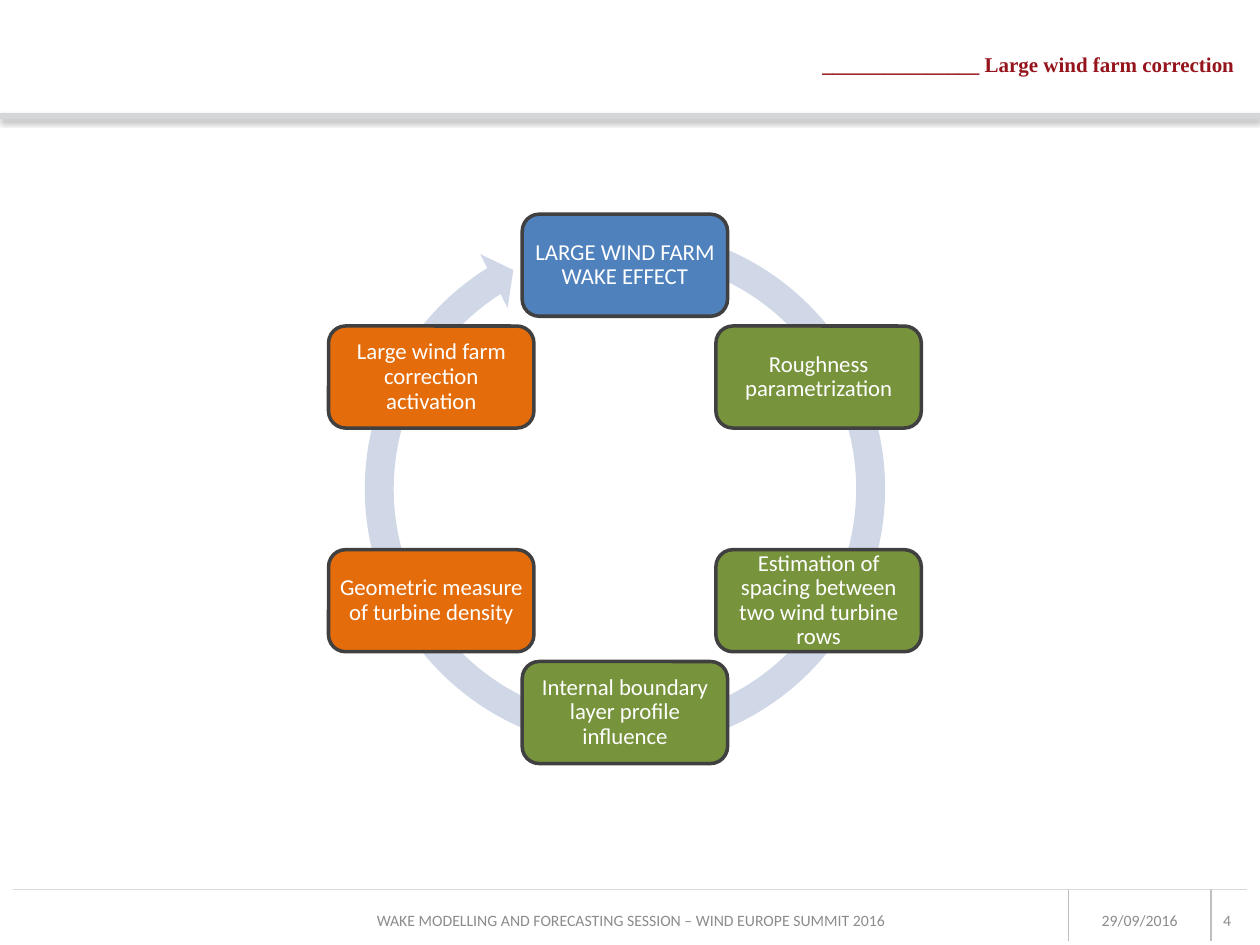
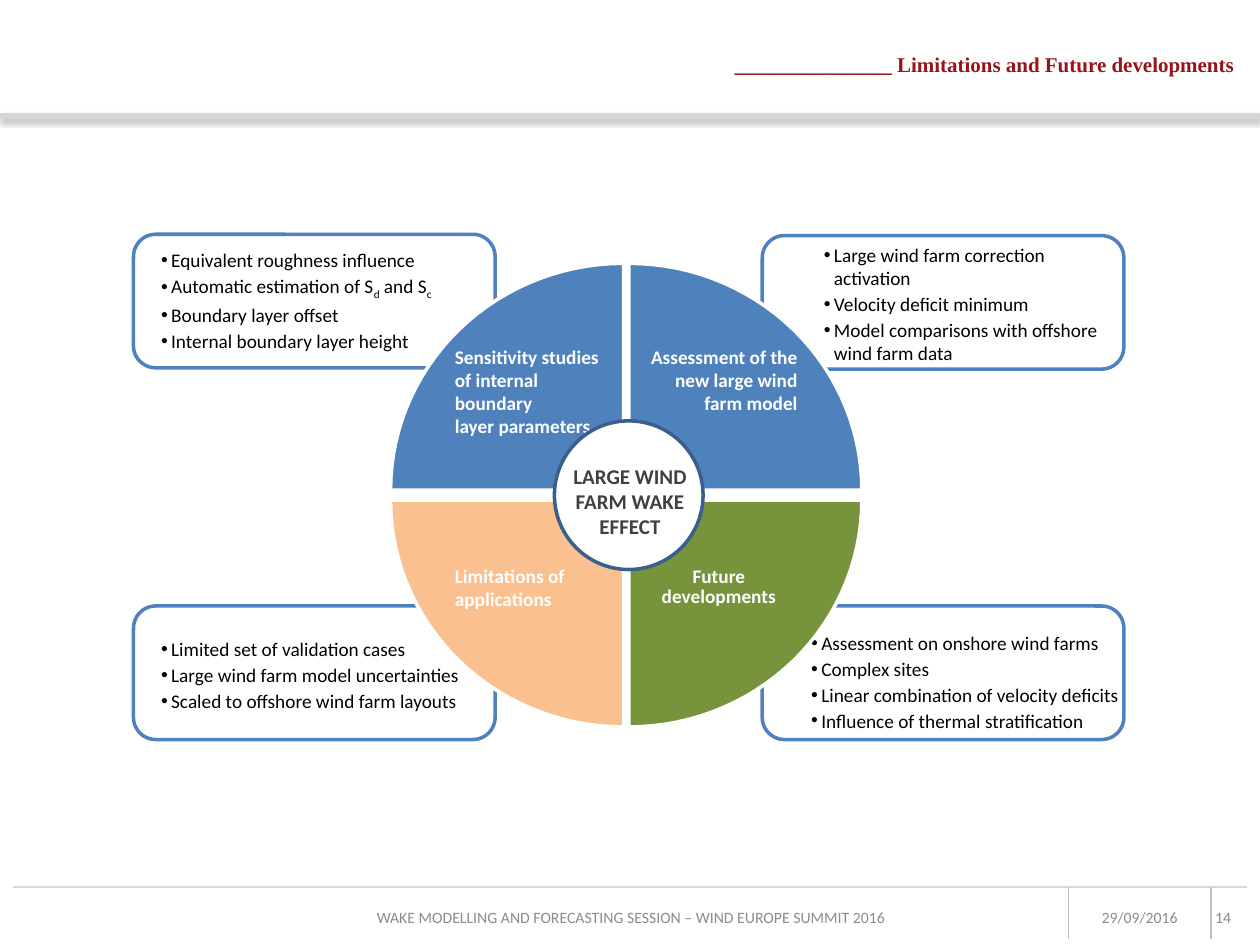
from math import cos, radians, sin

from lxml.etree import SubElement
from pptx import Presentation
from pptx.dml.color import RGBColor as Color
from pptx.enum.shapes import MSO_CONNECTOR as Connector, MSO_SHAPE as Shape
from pptx.enum.text import MSO_ANCHOR as Anchor, MSO_AUTO_SIZE as AutoSize, PP_ALIGN as Align
from pptx.oxml import parse_xml
from pptx.oxml.ns import nsdecls, qn
from pptx.util import Inches, Pt

THEME = {
    "colours": {
        "band": "D5D6D7", "rule": "D9D9D9", "divider": "BFBFBF", "ring": "D0D8E8",
        "blue": "4F81BD", "green": "77933C", "orange": "E46C0A", "peach": "FAC090",
        "hub": "3A5F8C", "dark": "404040", "white": "FFFFFF",
    },
    "type": {
        "title": ("96141C", {"name": "Times New Roman", "size": Pt(12), "bold": True}),
        "footer": ("8C8C8C", {"name": "Calibri", "size": Pt(9)}),
        "node": ("FFFFFF", {"name": "Calibri", "size": Pt(13)}),
        "bullet": ("000000", {"name": "Calibri", "size": Pt(11)}),
        "quadrant": ("FFFFFF", {"name": "Calibri", "size": Pt(11), "bold": True}),
        "hub": ("404040", {"name": "Calibri", "size": Pt(12), "bold": True}),
    },
}
COLOURS = {name: Color.from_string(value) for name, value in THEME["colours"].items()}


def write(shape, lines, style, paragraph_format, frame_format=None, bullet=False):
    frame = shape.text_frame
    frame_values = {"word_wrap": True, "auto_size": AutoSize.NONE, "vertical_anchor": Anchor.TOP}
    for name, value in (frame_values | (frame_format or {})).items():
        setattr(frame, name, value)
    colour, font_format = THEME["type"][style]
    for index, line in enumerate(lines):
        paragraph = frame.paragraphs[0] if index == 0 else frame.add_paragraph()
        if bullet:
            properties = paragraph._p.get_or_add_pPr()
            properties.set("marL", str(Inches(0.08)))
            properties.set("indent", str(-Inches(0.08)))
            SubElement(properties, qn("a:buFont")).set("typeface", "Arial")
            SubElement(properties, qn("a:buChar")).set("char", "•")
        for name, value in paragraph_format.items():
            setattr(paragraph, name, value)
        for position, text in enumerate((line,) if isinstance(line, str) else line):
            run = paragraph.add_run()
            run.text = text
            for name, value in font_format.items():
                setattr(run.font, name, value)
            run.font.color.rgb = Color.from_string(colour)
            if position % 2:
                run._r.get_or_add_rPr().set("baseline", "-25000")


def paint(shape, fill=None, line=None, width=2):
    if hasattr(shape, "fill"):
        shape.shadow.inherit = False
        if fill:
            shape.fill.solid()
            shape.fill.fore_color.rgb = COLOURS[fill]
        else:
            shape.fill.background()
    else:
        SubElement(shape._element.spPr, qn("a:effectLst"))
    if line:
        shape.line.color.rgb = COLOURS[line]
        shape.line.width = Pt(width)
    else:
        shape.line.fill.background()


presentation = Presentation()
presentation.slide_width = Inches(10)
presentation.slide_height = Inches(7.5)
title_only = presentation.slide_layouts[5]

pages = [
    ("_______________ Large wind farm correction", "4", 7.06),
    ("_______________ Limitations and Future developments", "14", 7.04),
]
for heading, number, footer_top in pages:
    slide = presentation.slides.add_slide(title_only)
    title = slide.shapes.title
    title.left, title.top, title.width, title.height = map(Inches, (5.12, 0.36, 4.78, 0.3))
    write(title, [heading], "title", {"alignment": Align.RIGHT})

    rules = [
        (0, 0.92, 10, 0.92, "band", 3),
        (0.1, footer_top, 9.9, footer_top, "rule", 1),
        (8.48, footer_top, 8.48, footer_top + 0.41, "divider", 1),
        (9.61, footer_top, 9.61, footer_top + 0.41, "divider", 1),
    ]
    for *ends, colour, width in rules:
        rule = slide.shapes.add_connector(Connector.STRAIGHT, *map(Inches, ends))
        paint(rule, line=colour, width=width)
        if colour == "band":
            rule._element.spPr.find(qn("a:effectLst")).append(parse_xml(
                f'<a:outerShdw {nsdecls("a")} blurRad="{Pt(3.1)}" dist="{Pt(1.8)}" dir="5400000" '
                'algn="t" rotWithShape="0"><a:srgbClr val="000000"><a:alpha val="35000"/>'
                '</a:srgbClr></a:outerShdw>'))

    footers = [
        (2.82, 4.37, "WAKE MODELLING AND FORECASTING SESSION – WIND EUROPE SUMMIT 2016", Align.CENTER),
        (8.6, 0.89, "29/09/2016", Align.CENTER),
        (9.51, 0.36, number, Align.RIGHT),
    ]
    for left, width, text, alignment in footers:
        box = slide.shapes.add_textbox(*map(Inches, (left, footer_top + 0.09, width, 0.3)))
        write(box, [text], "footer", {"alignment": alignment}, {"vertical_anchor": Anchor.MIDDLE})

cycle_slide, outlook_slide = presentation.slides

ring_size = 4.38
ring = cycle_slide.shapes.add_shape(
    Shape.CIRCULAR_ARROW, *map(Inches, (2.77, 1.69, ring_size, ring_size)))
ring_values = [0.23 / ring_size, 5.21 * 0.6, 237.77 * 0.6, 285.08 * 0.6, 0.24 / ring_size]
for index, value in enumerate(ring_values):
    ring.adjustments[index] = value
paint(ring, "ring")

nodes = [
    ("LARGE WIND FARM WAKE EFFECT", "blue"),
    ("Roughness parametrization", "green"),
    ("Estimation of spacing between two wind turbine rows", "green"),
    ("Internal boundary layer profile influence", "green"),
    ("Geometric measure of turbine density", "orange"),
    ("Large wind farm correction activation", "orange"),
]
node_width, node_height, cycle_radius = 1.63, 0.81, 1.775
node_frame = {f"margin_{side}": Inches(0.05) for side in ("left", "top", "right", "bottom")}
node_frame["vertical_anchor"] = Anchor.MIDDLE
for index, (text, colour) in enumerate(nodes):
    angle = radians(index * 360 / len(nodes))
    left = 4.96 + cycle_radius * sin(angle) - node_width / 2
    top = 3.88 - cycle_radius * cos(angle) - node_height / 2
    node = cycle_slide.shapes.add_shape(
        Shape.ROUNDED_RECTANGLE, *map(Inches, (left, top, node_width, node_height)))
    paint(node, colour, "dark")
    write(node, [text], "node", {"alignment": Align.CENTER, "line_spacing": 0.9}, node_frame)

cards = [
    (1.06, 1.86, (1.18, 1.92, 2.89, 0.92), [
        "Equivalent roughness influence",
        ("Automatic estimation of S", "d", " and S", "c"),
        "Boundary layer offset",
        "Internal boundary layer height",
    ]),
    (6.05, 1.87, (6.44, 1.88, 2.42, 1.08), [
        "Large wind farm correction activation",
        "Velocity deficit minimum",
        "Model comparisons with offshore wind farm data",
    ]),
    (1.06, 4.81, (1.18, 5.01, 2.89, 0.71), [
        "Limited set of validation cases",
        "Large wind farm model uncertainties",
        "Scaled to offshore wind farm layouts",
    ]),
    (6.05, 4.81, (6.34, 4.96, 2.73, 0.92), [
        "Assessment on onshore wind farms",
        "Complex sites",
        "Linear combination of velocity deficits",
        "Influence of thermal stratification",
    ]),
]
for left, top, text_area, points in cards:
    card = outlook_slide.shapes.add_shape(
        Shape.ROUNDED_RECTANGLE, *map(Inches, (left, top, 2.87, 1.06)))
    paint(card, line="blue")
    box = outlook_slide.shapes.add_textbox(*map(Inches, text_area))
    write(box, points, "bullet", {"alignment": Align.LEFT, "space_after": Pt(1.6)}, bullet=True)

quadrants = [
    (-1, -1, "blue", ["Sensitivity studies of internal boundary", "layer parameters"],
     {"alignment": Align.LEFT}, 0.19),
    (1, -1, "blue", ["Assessment of the new large wind farm model"], {"alignment": Align.RIGHT}, 0.37),
    (-1, 1, "peach", ["Limitations of applications"], {"alignment": Align.LEFT}, 0),
    (1, 1, "green", ["Future developments"], {"alignment": Align.CENTER, "line_spacing": 0.9}, 0),
]
outer, inner = 0.51, 0.09
for across, down, colour, lines, paragraph_format, lift in quadrants:
    corner_x, corner_y = 4.97 + across * 0.02, 3.93 + down * 0.04
    arc = [
        (Inches(corner_x + across * 1.85 * cos(radians(degree))),
         Inches(corner_y + down * 1.8 * sin(radians(degree))))
        for degree in range(0, 91, 3)
    ]
    builder = outlook_slide.shapes.build_freeform(Inches(corner_x), Inches(corner_y))
    builder.add_line_segments(arc, close=True)
    quadrant = builder.convert_to_shape()
    paint(quadrant, colour, "white")
    write(quadrant, lines, "quadrant", paragraph_format, {
        "vertical_anchor": Anchor.MIDDLE,
        "margin_left": Inches(outer if across < 0 else inner),
        "margin_right": Inches(inner if across < 0 else outer),
        "margin_top": Inches(outer if down < 0 else inner),
        "margin_bottom": Inches((inner if down < 0 else outer) + lift),
    })

hub = outlook_slide.shapes.add_shape(Shape.OVAL, *map(Inches, (4.4, 3.34, 1.18, 1.18)))
paint(hub, "white", "hub")
hub_label = outlook_slide.shapes.add_textbox(*map(Inches, (4.26, 3.63, 1.48, 0.71)))
write(hub_label, ["LARGE WIND FARM WAKE EFFECT"], "hub", {"alignment": Align.CENTER})

presentation.save("out.pptx")
